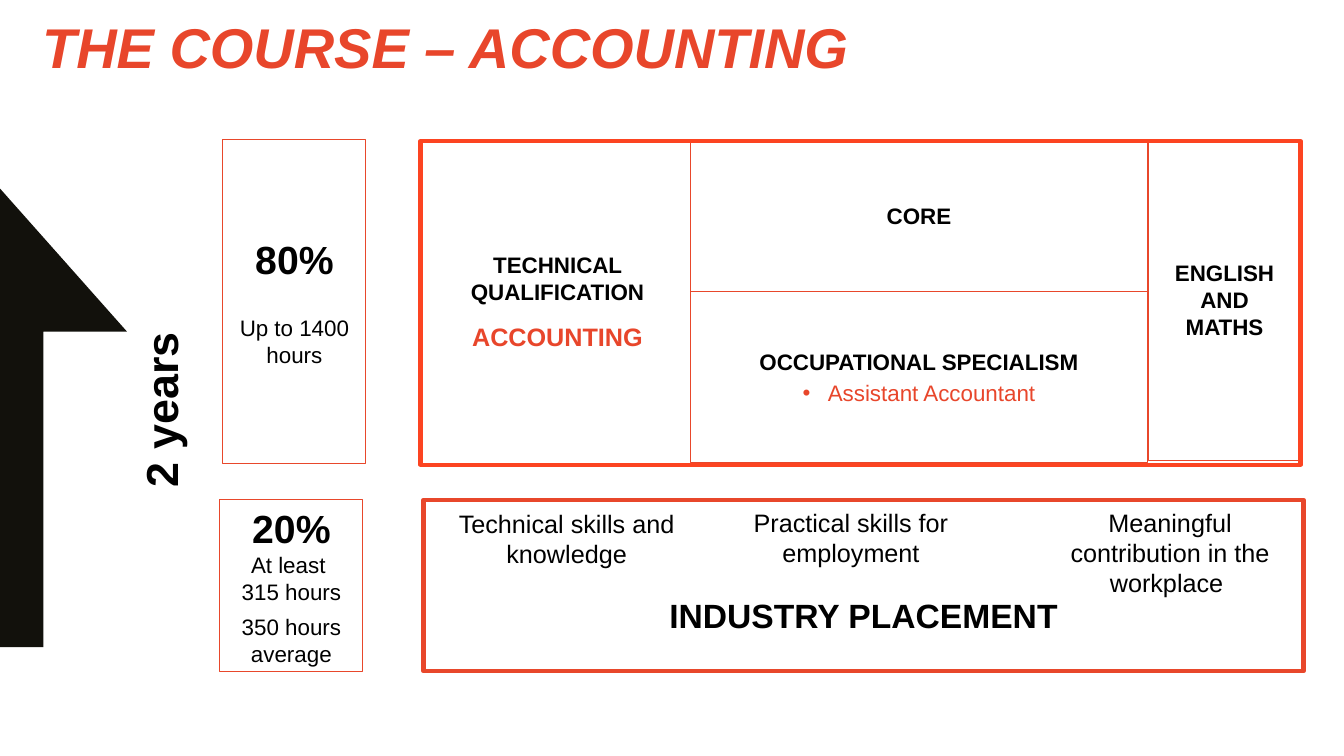
from dataclasses import dataclass

from lxml import etree
from pptx import Presentation
from pptx.dml.color import RGBColor
from pptx.enum import shapes, text
from pptx.oxml.ns import qn
from pptx.util import Inches, Pt

HUES = {"ink": "000000", "arrow": "12110C", "edge": "E8472B",
        "accent": "E8462B", "frame": "FC4421", "white": "FFFFFF"}
FONT = "Arial"


@dataclass(frozen=True)
class Line:
    """One paragraph with its format."""
    words: str
    size: int = 16
    bold: bool = False
    hue: str = "ink"
    before: int = 0
    after: int = 0
    bullet: bool = False
    italic: bool = False


@dataclass(frozen=True)
class Box:
    left: float
    top: float
    wide: float
    high: float
    lines: tuple[Line, ...] = ()
    edge: str | None = None
    width: float = 0.75
    fill: str | None = None
    middle: bool = True
    turn: int = 0
    align: text.PP_ALIGN = text.PP_ALIGN.CENTER


def hue(name: str) -> RGBColor:
    return RGBColor.from_string(HUES[name])


def write(para, words: str, *, size: int, bold: bool, italic: bool, tint: str,
          align: text.PP_ALIGN, before: int, after: int, bullet: bool) -> None:
    if bullet:
        props = para._p.get_or_add_pPr()
        props.set("marL", str(Inches(0.25)))
        props.set("indent", str(Inches(-0.25)))
        etree.SubElement(props, qn("a:buFont")).set("typeface", FONT)
        etree.SubElement(props, qn("a:buChar")).set("char", "•")
    para.alignment = align
    para.space_before, para.space_after = Pt(before), Pt(after)
    run = para.add_run()
    run.text = words
    font = run.font
    font.name, font.size, font.bold, font.italic = FONT, Pt(size), bold, italic
    font.color.rgb = hue(tint)


def draw(slide, box: Box) -> None:
    """Draw a rectangle, or a text box when there is neither edge nor fill."""
    area = [Inches(n) for n in (box.left, box.top, box.wide, box.high)]
    if box.edge or box.fill:
        shape = slide.shapes.add_shape(shapes.MSO_SHAPE.RECTANGLE, *area)
        shape.shadow.inherit = False
        if box.fill:
            shape.fill.solid()
            shape.fill.fore_color.rgb = hue(box.fill)
        else:
            shape.fill.background()
        if box.edge:
            shape.line.color.rgb = hue(box.edge)
            shape.line.width = Pt(box.width)
        else:
            shape.line.fill.background()
    else:
        shape = slide.shapes.add_textbox(*area)
    shape.rotation = box.turn
    frame = shape.text_frame
    frame.word_wrap = True
    frame.vertical_anchor = (text.MSO_ANCHOR.MIDDLE if box.middle
                             else text.MSO_ANCHOR.TOP)
    for i, line in enumerate(box.lines):
        para = frame.add_paragraph() if i else frame.paragraphs[0]
        write(para, line.words, size=line.size, bold=line.bold,
              italic=line.italic, tint=line.hue, align=box.align,
              before=line.before, after=line.after, bullet=line.bullet)


def arrow(slide) -> None:
    """Draw the half arrow that rises along the left edge."""
    tip, neck, foot = 1.87, 3.29, 6.42
    start, *rest = [(Inches(x), Inches(y)) for x, y in (
        (0.43, neck), (1.26, neck), (0, tip), (0, foot), (0.43, foot))]
    pen = slide.shapes.build_freeform(*start)
    pen.add_line_segments(rest, close=True)
    shape = pen.convert_to_shape()
    shape.shadow.inherit = False
    shape.fill.solid()
    shape.fill.fore_color.rgb = hue("arrow")
    shape.line.fill.background()


def skill(left: float, top: float, wide: float, high: float, words: str) -> Box:
    return Box(left, top, wide, high, (Line(words, 18),), middle=False)


MID, SPAN = 6.85, 4.53
BOXES = (
    Box(2.21, 1.38, 1.42, 3.22, (
        Line("80%", 28, True), Line("Up to 1400 hours", before=23)), "edge"),
    Box(2.18, 4.96, 1.42, 1.7, (
        Line("20%", 28, True), Line("At least "), Line("315 hours", after=6),
        Line("350 hours average")), "edge"),
    Box(4.2, 1.38, 2.66, 3.22, (
        Line("TECHNICAL QUALIFICATION", bold=True, after=6),
        Line("ACCOUNTING", 18, True, "accent", before=6, after=6))),
    Box(MID, 1.39, SPAN, 1.5, (Line("CORE", bold=True),), "edge"),
    Box(MID, 2.89, SPAN, 1.7, (
        Line("OCCUPATIONAL SPECIALISM", bold=True),
        Line("Assistant Accountant", hue="accent", before=3, after=3,
             bullet=True)), "edge"),
    Box(11.39, 1.38, 1.51, 3.19, (Line("ENGLISH AND MATHS", bold=True),), "edge"),
    Box(-0.98, 3.83, 5.14, 0.47, (Line("2 years", 32, True),), turn=270),
    Box(4.17, 1.4, 8.73, 3.21, edge="frame", width=3),
    skill(4.26, 4.99, 2.72, 0.83, "Technical skills and knowledge"),
    skill(7.06, 4.98, 2.76, 0.81, "Practical skills for employment"),
    Box(4.32, 5.93, 8.58, 0.35, (Line("INDUSTRY PLACEMENT ", 24, True),),
        fill="white"),
    Box(4.2, 4.96, 8.73, 1.7, edge="edge", width=3),
    skill(10.32, 4.98, 2.57, 1.17, "Meaningful contribution in the workplace "),
    Box(0.32, 0.07, 12.69, 1.42, (
        Line("THE COURSE – ACCOUNTING", 40, True, "accent", italic=True),),
        middle=False, align=text.PP_ALIGN.LEFT),
)


def main() -> None:
    deck = Presentation()
    deck.slide_width, deck.slide_height = Inches(13.33), Inches(7.5)
    slide = deck.slides.add_slide(deck.slide_layouts[6])
    arrow(slide)
    for box in BOXES:
        draw(slide, box)
    deck.save("out.pptx")


if __name__ == "__main__":
    main()
